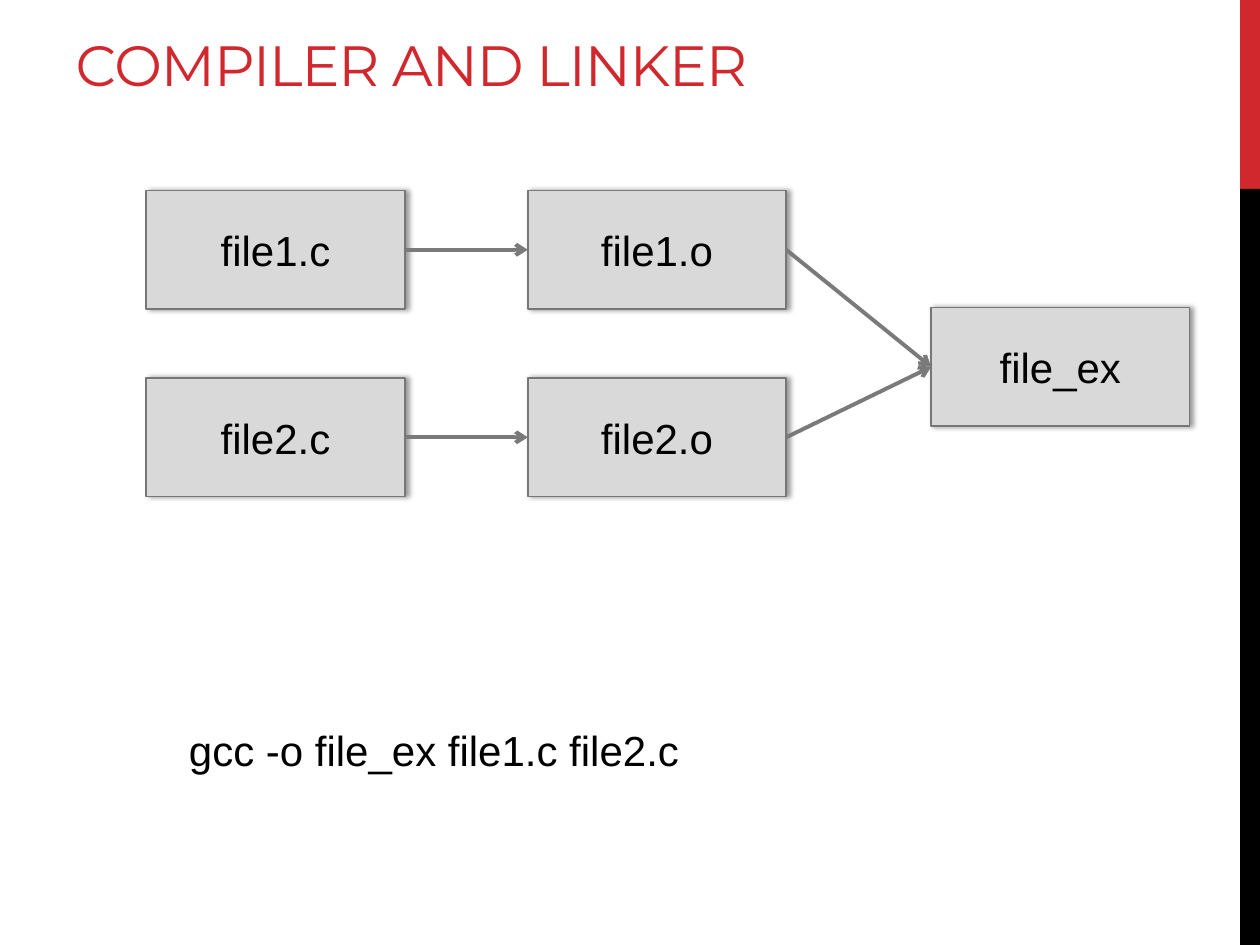
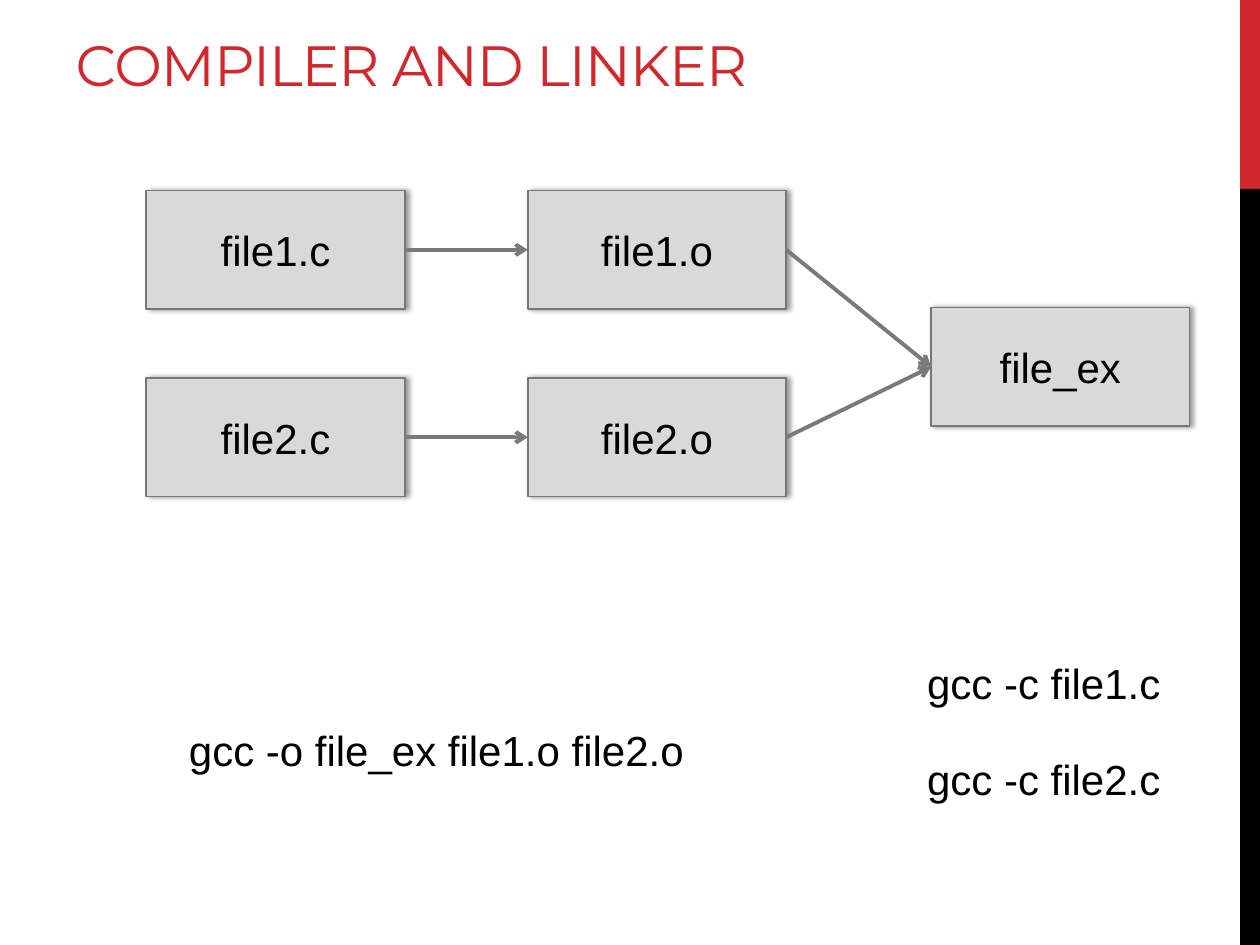
from lxml.etree import SubElement
from pptx import Presentation
from pptx.dml.color import RGBColor
from pptx.enum.shapes import MSO_CONNECTOR, MSO_SHAPE
from pptx.enum.text import MSO_ANCHOR, MSO_AUTO_SIZE, PP_ALIGN
from pptx.oxml.ns import qn
from pptx.util import Cm, Pt

TITLE = "COMPILER AND LINKER"
# Each file: left and top in cm
FILES = {
    "file1.c": (2.95, 3.84),
    "file2.c": (2.95, 7.62),
    "file1.o": (10.64, 3.84),
    "file2.o": (10.64, 7.62),
    "file_ex": (18.77, 6.2),
}
STEPS = [
    ("file1.c", "file1.o"),
    ("file2.c", "file2.o"),
    ("file1.o", "file_ex"),
    ("file2.o", "file_ex"),
]
# Each slide's commands: text, left, top and width in cm
SLIDES = [
    [("gcc -o file_ex file1.c file2.c", 3.56, 14.48, 10.49)],
    [
        ("gcc -c file1.c", 18.44, 13.13, 5.26),
        ("gcc -c file2.c", 18.44, 15.06, 5.26),
        ("gcc -o file_ex file1.o file2.o", 3.56, 14.48, 10.59),
    ],
]

RED, BLACK, BOX_FILL, BOX_LINE, ARROW = "D1282E", "000000", "D9D9D9", "777777", "7A7A7A"
SLIDE_WIDTH, SLIDE_HEIGHT = 25.4, 19.05
BAND_WIDTH, RED_HEIGHT = 0.4, 3.81
BOX_WIDTH, BOX_HEIGHT = 5.21, 2.39
LEFT_SITE, RIGHT_SITE = 1, 3


def color(hex_string):
    return RGBColor.from_string(hex_string)


def write(text_frame, text, font_name="Arial", size=24, hex_color=BLACK):
    run = text_frame.paragraphs[0].add_run()
    run.text = text
    run.font.name = font_name
    run.font.size = Pt(size)
    run.font.color.rgb = color(hex_color)
    return run


def add_rectangle(slide, left, top, width, height, fill):
    shape = slide.shapes.add_shape(
        MSO_SHAPE.RECTANGLE, Cm(left), Cm(top), Cm(width), Cm(height))
    shape.shadow.inherit = False
    shape.fill.solid()
    shape.fill.fore_color.rgb = color(fill)
    shape.line.fill.background()
    return shape


def add_bands(slide):
    """Put the side bands on the slide's layout, behind its placeholders."""
    left = SLIDE_WIDTH - BAND_WIDTH
    bands = [(0, RED_HEIGHT, RED), (RED_HEIGHT, SLIDE_HEIGHT - RED_HEIGHT, BLACK)]
    for index, (top, height, fill) in enumerate(bands):
        band = add_rectangle(slide, left, top, BAND_WIDTH, height, fill)
        band._element.nvSpPr.cNvPr.set("id", str(101 + index))
        slide.slide_layout.shapes._spTree.insert(2 + index, band._element)


def set_title(slide):
    title = slide.shapes.title
    title.left, title.top, title.width, title.height = Cm(1.27), Cm(0.43), Cm(22.91), Cm(1.68)
    frame = title.text_frame
    frame.auto_size = MSO_AUTO_SIZE.NONE
    frame.vertical_anchor = MSO_ANCHOR.BOTTOM
    frame.paragraphs[0].alignment = PP_ALIGN.LEFT
    run = write(frame, TITLE, "Montserrat", 32.4, RED)
    run.font._element.set("spc", "-60")


def add_soft_shadow(shape):
    effects = shape._element.spPr.find(qn("a:effectLst"))
    shadow = SubElement(effects, qn("a:outerShdw"), blurRad=str(Pt(3.1)),
                        dist=str(Pt(1.8)), dir="0", rotWithShape="0")
    shade = SubElement(shadow, qn("a:srgbClr"), val=BLACK)
    SubElement(shade, qn("a:alpha"), val="40000")


def add_file_box(slide, name, left, top):
    box = add_rectangle(slide, left, top, BOX_WIDTH, BOX_HEIGHT, BOX_FILL)
    box.line.color.rgb = color(BOX_LINE)
    box.line.width = Pt(1)
    add_soft_shadow(box)
    box.text_frame.vertical_anchor = MSO_ANCHOR.MIDDLE
    box.text_frame.paragraphs[0].alignment = PP_ALIGN.CENTER
    write(box.text_frame, name)
    return box


def add_arrow(slide, source, target):
    arrow = slide.shapes.add_connector(MSO_CONNECTOR.STRAIGHT, 0, 0, 0, 0)
    arrow.begin_connect(source, RIGHT_SITE)
    arrow.end_connect(target, LEFT_SITE)
    arrow.line.color.rgb = color(ARROW)
    arrow.line.width = Pt(2.25)
    SubElement(arrow.line._get_or_add_ln(), qn("a:tailEnd"), type="arrow")
    SubElement(arrow._element.spPr, qn("a:effectLst"))


def add_command(slide, text, left, top, width):
    box = slide.shapes.add_textbox(Cm(left), Cm(top), Cm(width), Cm(1.27))
    box.text_frame.word_wrap = False
    box.text_frame.auto_size = MSO_AUTO_SIZE.SHAPE_TO_FIT_TEXT
    write(box.text_frame, text)


def main():
    presentation = Presentation()
    presentation.slide_width = Cm(SLIDE_WIDTH)
    presentation.slide_height = Cm(SLIDE_HEIGHT)
    title_only = presentation.slide_layouts[5]
    for number, commands in enumerate(SLIDES):
        slide = presentation.slides.add_slide(title_only)
        if number == 0:
            add_bands(slide)
        set_title(slide)
        boxes = {name: add_file_box(slide, name, *place) for name, place in FILES.items()}
        for source, target in STEPS:
            add_arrow(slide, boxes[source], boxes[target])
        for command in commands:
            add_command(slide, *command)
    presentation.save("out.pptx")


if __name__ == "__main__":
    main()
